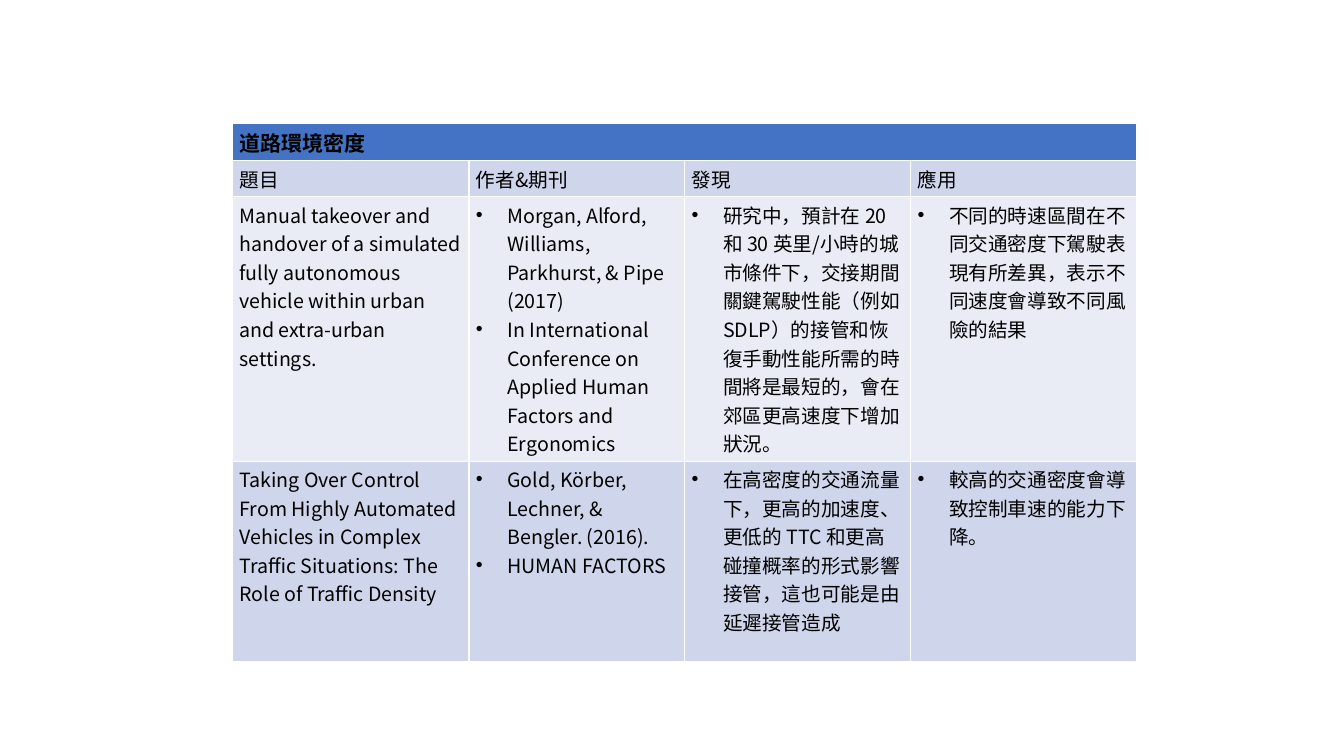
from lxml import etree
from pptx import Presentation
from pptx.dml.color import RGBColor
from pptx.enum.text import MSO_ANCHOR
from pptx.oxml.ns import qn
from pptx.util import Pt

TOP = MSO_ANCHOR.TOP
HEADER_BLUE = RGBColor(0x44, 0x72, 0xC4)
BAND_DARK = RGBColor(0xCF, 0xD5, 0xEA)
BAND_LIGHT = RGBColor(0xE9, 0xEB, 0xF5)
BLACK = RGBColor(0, 0, 0)
FONT = "Noto Sans CJK SC"

TABLE_BOX = (166, 88, 646, 345)
COLUMN_WIDTHS = (169, 154, 161.5, 161.5)
ROW_HEIGHTS = (25, 25, 152, 143)
BULLET_INDENT = 22.5
CELL_FORMAT = {
    "margin_left": Pt(5),
    "margin_right": Pt(5),
    "margin_top": Pt(2.6),
    "margin_bottom": Pt(2.6),
    "vertical_anchor": TOP,
}
TITLE_FONT = {"name": FONT, "size": Pt(15), "bold": True}
BODY_FONT = {"name": FONT, "size": Pt(14), "bold": False}

TITLE = "道路環境密度"
HEADINGS = ("題目", "作者&期刊", "發現", "應用")
STUDIES = (
    (
        "Manual takeover and handover of a simulated fully autonomous vehicle "
        "within urban and extra-urban settings.",
        (
            "Morgan, Alford, Williams, Parkhurst, & Pipe (2017)",
            "In International Conference on Applied Human Factors and Ergonomics",
        ),
        (
            "研究中，預計在 20 和 30 英里/小時的城市條件下，交接期間關鍵駕駛性能"
            "（例如 SDLP）的接管和恢復手動性能所需的時間將是最短的，會在郊區更高速度下增加狀況。",
        ),
        ("不同的時速區間在不同交通密度下駕駛表現有所差異，表示不同速度會導致不同風險的結果",),
    ),
    (
        "Taking Over Control From Highly Automated Vehicles in Complex "
        "Traffic Situations: The Role of Traffic Density",
        ("Gold, Körber, Lechner, & Bengler. (2016).", "HUMAN FACTORS"),
        (
            "在高密度的交通流量下，更高的加速度、更低的 TTC 和更高碰撞概率的形式影響接管，"
            "這也可能是由延遲接管造成",
        ),
        ("較高的交通密度會導致控制車速的能力下降。",),
    ),
)


def set_attributes(target, values):
    for name, value in values.items():
        setattr(target, name, value)


def add_bullet(para):
    properties = para._p.get_or_add_pPr()
    properties.set("marL", str(Pt(BULLET_INDENT)))
    properties.set("indent", str(-Pt(BULLET_INDENT)))
    etree.SubElement(properties, qn("a:buFont")).set("typeface", "Arial")
    etree.SubElement(properties, qn("a:buChar")).set("char", "•")


def add_span(para, text, font_format):
    span = para.add_run()
    span.text = text
    set_attributes(span.font, font_format)
    span.font.color.rgb = BLACK
    east_asian = etree.SubElement(span._r.get_or_add_rPr(), qn("a:ea"))
    east_asian.set("typeface", FONT)


def fill_cell(cell, content, color, font_format=BODY_FONT):
    set_attributes(cell, CELL_FORMAT)
    cell.fill.solid()
    cell.fill.fore_color.rgb = color
    bulleted = not isinstance(content, str)
    lines = content if bulleted else (content,)
    frame = cell.text_frame
    for index, line in enumerate(lines):
        para = frame.add_paragraph() if index else frame.paragraphs[0]
        if bulleted:
            add_bullet(para)
        add_span(para, line, font_format)


def add_study_table(page, box):
    left, top, width, height = map(Pt, box)
    table = page.shapes.add_table(
        len(ROW_HEIGHTS), len(COLUMN_WIDTHS), left, top, width, height
    ).table
    for column, column_width in zip(table.columns, COLUMN_WIDTHS):
        column.width = Pt(column_width)
    for row, row_height in zip(table.rows, ROW_HEIGHTS):
        row.height = Pt(row_height)

    title_cell = table.cell(0, 0)
    title_cell.merge(table.cell(0, len(COLUMN_WIDTHS) - 1))
    fill_cell(title_cell, TITLE, HEADER_BLUE, TITLE_FONT)
    for row_index, contents in enumerate((HEADINGS, *STUDIES), start=1):
        color = BAND_DARK if row_index % 2 else BAND_LIGHT
        for column_index, content in enumerate(contents):
            fill_cell(table.cell(row_index, column_index), content, color)


def main():
    deck = Presentation()
    deck.slide_width = Pt(960)
    deck.slide_height = Pt(540)
    page = deck.slides.add_slide(deck.slide_layouts[6])
    add_study_table(page, TABLE_BOX)
    deck.save("out.pptx")


if __name__ == "__main__":
    main()
